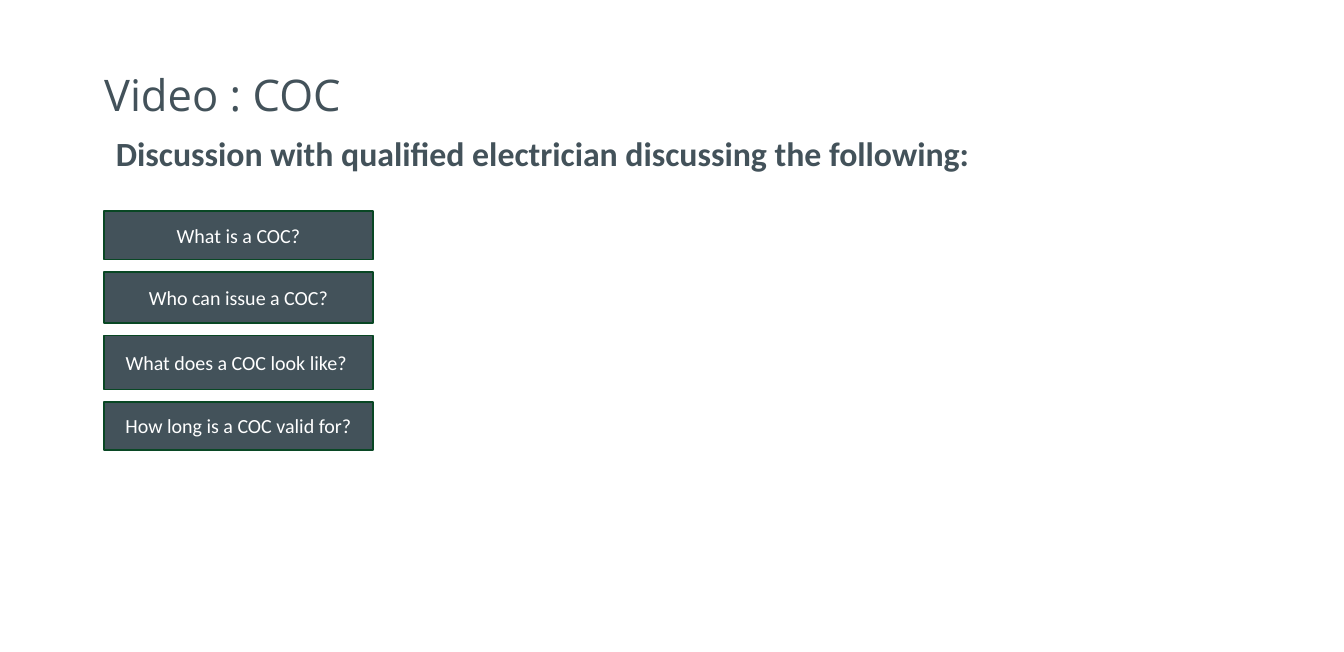
import dataclasses

import pptx
import pptx.dml.color
import pptx.enum.shapes
import pptx.enum.text
import pptx.shapes.base
import pptx.slide
import pptx.text.text
import pptx.util
from lxml import etree
from pptx.oxml.ns import qn

COLOURS = {"slate": "43525A", "green": "094724", "white": "FFFFFF"}
CM_PER_INCH = 2.54
SLIDE_WIDTH, SLIDE_HEIGHT = 11.2 * CM_PER_INCH, 5.43 * CM_PER_INCH
QUESTION_LEFT, QUESTION_WIDTH = 2.2, 5.7
FIRST_TOP, QUESTION_GAP = 4.47, 0.26


@dataclasses.dataclass(frozen=True)
class Question:
    """A question of the video and the height of its box in centimetres."""
    text: str
    height: float


QUESTIONS = [
    Question("What is a COC?", 1.02),
    Question("Who can issue a COC?", 1.09),
    Question("What does a COC look like? ", 1.14),
    Question("How long is a COC valid for?", 1.02),
]


def colour(name: str) -> pptx.dml.color.RGBColor:
    """Return the named colour."""
    return pptx.dml.color.RGBColor.from_string(COLOURS[name])


def format_text(paragraph: pptx.text.text._Paragraph, font: str, size: float,
                shade: str, centred: bool = False, bold: bool = False) -> None:
    """Set the font and alignment of a paragraph."""
    paragraph.font.name = font
    paragraph.font.size = pptx.util.Pt(size)
    paragraph.font.bold = bold
    paragraph.font.color.rgb = colour(shade)
    align = pptx.enum.text.PP_ALIGN
    paragraph.alignment = align.CENTER if centred else align.LEFT


def place(shape: pptx.shapes.base.BaseShape, left: float, top: float,
          width: float, height: float) -> None:
    """Move and size a shape, in centimetres."""
    shape.left, shape.top = pptx.util.Cm(left), pptx.util.Cm(top)
    shape.width, shape.height = pptx.util.Cm(width), pptx.util.Cm(height)


def add_headings(slide: pptx.slide.Slide) -> None:
    """Fill the title and the introduction."""
    heading, introduction = slide.placeholders
    place(heading, 1.95, 0.73, 24.54, 2.66)
    place(introduction, 2.2, 2.77, 22.83, 10.87)
    heading.text_frame.text = "Video : COC"
    introduction.text_frame.text = (
        "Discussion with qualified electrician discussing the following:")
    for placeholder in (heading, introduction):
        placeholder.text_frame.auto_size = pptx.enum.text.MSO_AUTO_SIZE.NONE
        placeholder.text_frame.paragraphs[0].line_spacing = 0.9
    heading.text_frame.vertical_anchor = pptx.enum.text.MSO_ANCHOR.MIDDLE
    format_text(heading.text_frame.paragraphs[0], "Open Sans", 26.1, "slate")

    opening = introduction.text_frame.paragraphs[0]
    format_text(opening, "Calibri", 20.3, "slate", bold=True)
    opening.space_before = pptx.util.Pt(7.2)
    properties = opening._p.get_or_add_pPr()
    properties.set("marL", "0")
    properties.set("indent", "0")
    no_bullet = etree.SubElement(properties, qn("a:buNone"))
    properties.find(qn("a:defRPr")).addprevious(no_bullet)


def add_question(slide: pptx.slide.Slide, question: Question, top: float) -> None:
    """Draw one question in its box."""
    box = slide.shapes.add_shape(
        pptx.enum.shapes.MSO_SHAPE.RECTANGLE,
        pptx.util.Cm(QUESTION_LEFT), pptx.util.Cm(top),
        pptx.util.Cm(QUESTION_WIDTH), pptx.util.Cm(question.height))
    box.shadow.inherit = False
    box.fill.solid()
    box.fill.fore_color.rgb = colour("slate")
    box.line.color.rgb = colour("green")
    box.line.width = pptx.util.Pt(1)
    box.text_frame.text = question.text
    box.text_frame.vertical_anchor = pptx.enum.text.MSO_ANCHOR.MIDDLE
    format_text(box.text_frame.paragraphs[0], "Calibri", 12, "white", centred=True)


def main() -> None:
    """Build the slide and save it."""
    deck = pptx.Presentation()
    deck.slide_width = pptx.util.Cm(SLIDE_WIDTH)
    deck.slide_height = pptx.util.Cm(SLIDE_HEIGHT)
    slide = deck.slides.add_slide(deck.slide_layouts[1])
    add_headings(slide)
    top = FIRST_TOP
    for question in QUESTIONS:
        add_question(slide, question, top)
        top += question.height + QUESTION_GAP
    deck.save("out.pptx")


if __name__ == "__main__":
    main()
